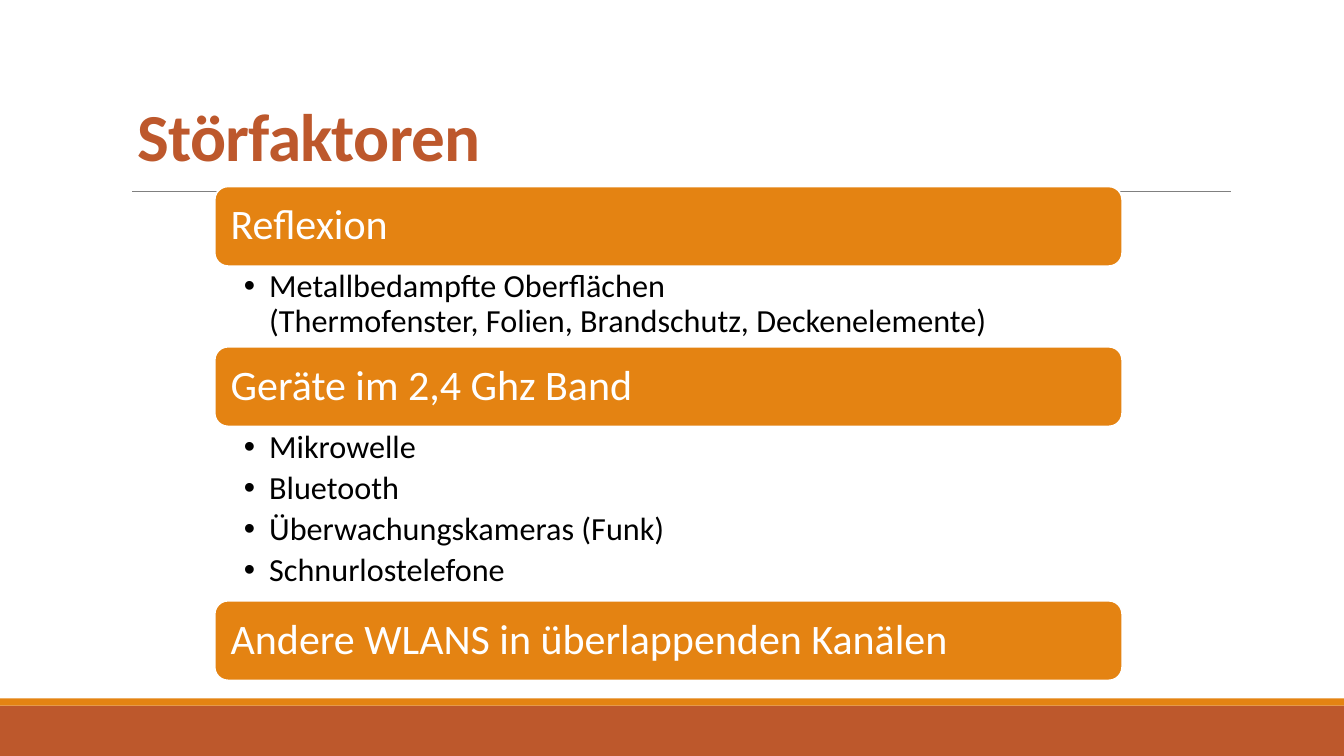
from lxml.etree import SubElement
from pptx import Presentation
from pptx.dml.color import RGBColor
from pptx.enum.shapes import MSO_CONNECTOR, MSO_SHAPE
from pptx.enum.text import MSO_ANCHOR, MSO_AUTO_SIZE, PP_ALIGN
from pptx.oxml.ns import qn
from pptx.util import Inches, Pt

# Content: heading, bullets, height of the bullet area
TITLE = "Störfaktoren"
GROUPS = [
    ("Reflexion",
     ["Metallbedampfte Oberflächen\n"
      "(Thermofenster, Folien, Brandschutz, Deckenelemente)"], 0.8),
    ("Geräte im 2,4 Ghz Band",
     ["Mikrowelle", "Bluetooth", "Überwachungskameras (Funk)",
      "Schnurlostelefone"], 1.73),
    ("Andere WLANS in überlappenden Kanälen", [], 0),
]
COLORS = {"rust": "BD582C", "orange": "E48312", "rule": "808080",
          "white": "FFFFFF", "black": "000000"}
FONT = "Calibri"
LEFT, TOP, WIDTH, BAR = 2.13, 1.85, 9, 0.79


def color(name):
    return RGBColor.from_string(COLORS[name])


def add_box(kind, x, y, w, h, fill):
    box = slide.shapes.add_shape(kind, Inches(x), Inches(y), Inches(w), Inches(h))
    box.shadow.inherit = False
    box.fill.solid()
    box.fill.fore_color.rgb = color(fill)
    box.line.fill.background()
    return box


def set_frame(frame, anchor, left, top, right):
    frame.word_wrap = True
    frame.auto_size = MSO_AUTO_SIZE.NONE
    frame.vertical_anchor = anchor
    frame.margin_left, frame.margin_right = Inches(left), Inches(right)
    frame.margin_top = frame.margin_bottom = Inches(top)


def add_text(para, text, size, tint, spacing=0.9, bold=False):
    para.alignment = PP_ALIGN.LEFT
    para.line_spacing = spacing
    for i, line in enumerate(text.split("\n")):
        if i:
            para.add_line_break()
        run = para.add_run()
        run.text = line
        run.font.name, run.font.size, run.font.bold = FONT, Pt(size), bold
        run.font.color.rgb = color(tint)


def add_bullet(para):
    props = para._p.get_or_add_pPr()
    props.set("marL", str(Inches(0.25)))
    props.set("indent", str(-Inches(0.25)))
    SubElement(props, qn("a:buFont"), typeface="Arial")
    SubElement(props, qn("a:buChar"), char="•")


deck = Presentation()
deck.slide_width, deck.slide_height = Inches(13.33), Inches(7.5)
slide = deck.slides.add_slide(deck.slide_layouts[5])

# Footer bands and title rule
add_box(MSO_SHAPE.RECTANGLE, 0, 7, 13.33, 0.5, "rust")
add_box(MSO_SHAPE.RECTANGLE, 0, 6.93, 13.33, 0.07, "orange")
rule = slide.shapes.add_connector(MSO_CONNECTOR.STRAIGHT, Inches(1.31), Inches(1.9),
                                  Inches(12.21), Inches(1.9))
rule.line.color.rgb = color("rule")
rule.line.width = Pt(0.5)
SubElement(rule._element.spPr, qn("a:effectLst"))

# Title
title = slide.shapes.title
title.left, title.top = Inches(1.26), Inches(0.34)
title.width, title.height = Inches(11), Inches(1.45)
set_frame(title.text_frame, MSO_ANCHOR.BOTTOM, 0.1, 0.05, 0.1)
head = title.text_frame.paragraphs[0]
add_text(head, TITLE, 48, "rust", 0.85, True)
head.runs[0].font._element.set("spc", "-50")

# Heading bars, each followed by its bullets
y = TOP
for name, items, height in GROUPS:
    bar = add_box(MSO_SHAPE.ROUNDED_RECTANGLE, LEFT, y, WIDTH, BAR, "orange")
    bar.line.color.rgb = color("white")
    bar.line.width = Pt(1.25)
    set_frame(bar.text_frame, MSO_ANCHOR.MIDDLE, 0.12, 0.12, 0.12)
    add_text(bar.text_frame.paragraphs[0], name, 30, "white")
    y += BAR
    if items:
        box = slide.shapes.add_textbox(Inches(LEFT), Inches(y),
                                       Inches(WIDTH), Inches(height))
        frame = box.text_frame
        set_frame(frame, MSO_ANCHOR.TOP, 0.29, 0.04, 0.23)
        for i, item in enumerate(items):
            para = frame.add_paragraph() if i else frame.paragraphs[0]
            add_bullet(para)
            para.level = 1
            para.space_after = Pt(4.5)
            add_text(para, item, 23, "black")
    y += height

deck.save("out.pptx")
